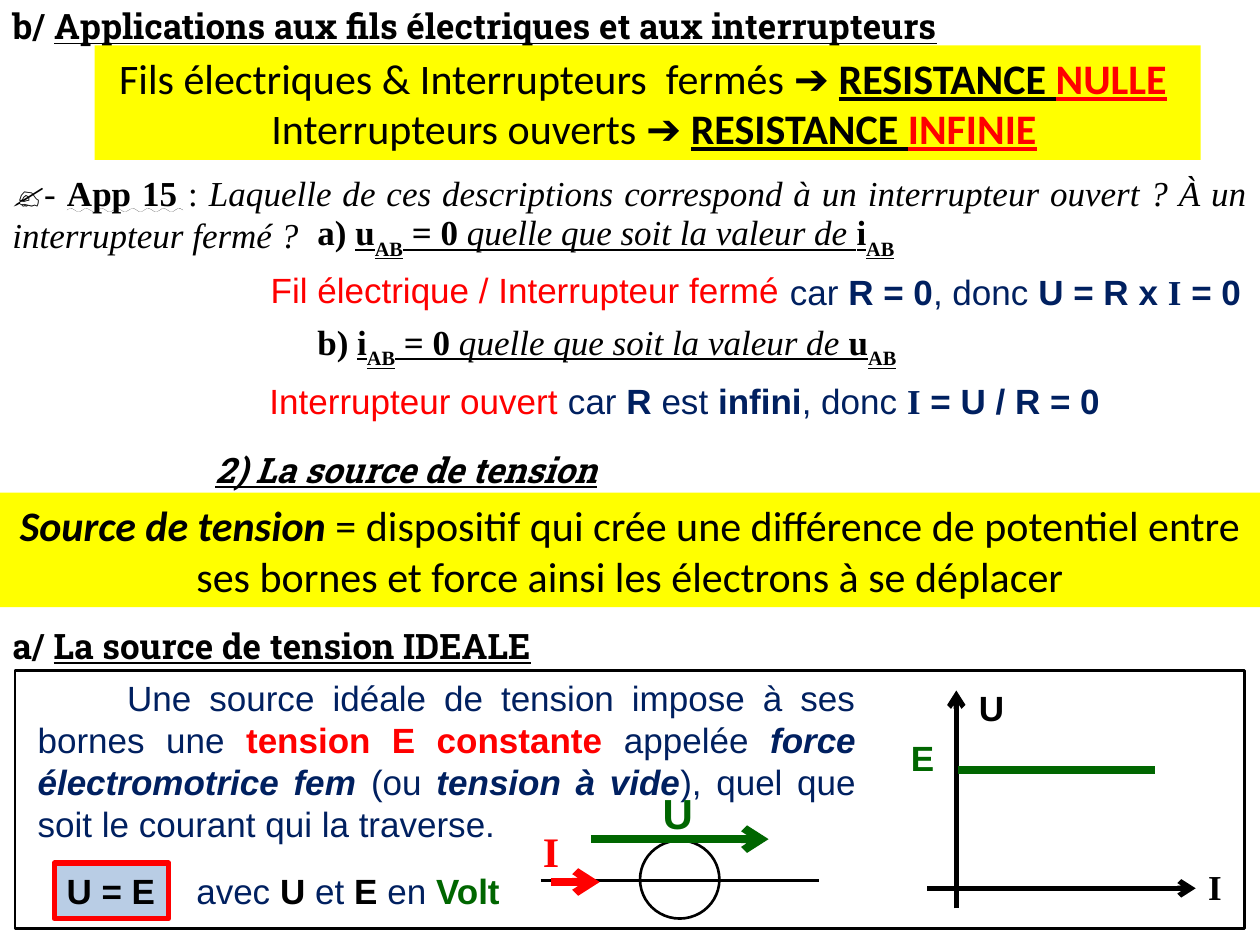
import pptx
import pptx.util
import pptx.dml.color
import pptx.enum.shapes
import pptx.enum.text
import pptx.oxml
import pptx.oxml.ns
from dataclasses import dataclass
from typing import Any, NamedTuple

Kind = pptx.enum.shapes.MSO_SHAPE
Align = pptx.enum.text.PP_ALIGN
Mid = pptx.enum.text.MSO_ANCHOR.MIDDLE
WAVE = pptx.enum.text.MSO_UNDERLINE.WAVY_LINE
COLS, ROWS = 100, 75
INK = {
    "black": "000000", "red": "FF0000", "navy": "002060",
    "green": "006600", "yellow": "FFFF00", "pale": "B9CDE5",
}
SANS, SERIF, SLAB, BODY = "Arial", "Times New Roman", "Roboto Slab", "Calibri"
STYLE = {"b": {"bold": True}, "i": {"italic": True}, "u": {"underline": True},
         "w": {"underline": WAVE}}


class Run(NamedTuple):
    text: str
    flags: str = ""
    ink: str = ""
    face: str = ""


class Para(NamedTuple):
    runs: list[Run]
    align: Any = Align.LEFT
    indent: float = 0
    after: float = 0


@dataclass
class Label:
    box: tuple[float, float, float, float]
    paras: list[Para]
    face: str = SANS
    ink: str = "black"
    size: int = 20
    wrap: bool = True
    anchor: Any = None


@dataclass
class Panel:
    box: tuple[float, float, float, float]
    kind: Any = Kind.RECTANGLE
    fill: str = ""
    edge: str = ""
    width: float = 1.5


@dataclass
class Stroke:
    start: tuple[float, float]
    end: tuple[float, float]
    ink: str = "black"
    width: float = 1.5
    arrow: bool = True


deck = pptx.Presentation()
deck.slide_width = pptx.util.Inches(10)
deck.slide_height = pptx.util.Inches(7.5)
slide = deck.slides.add_slide(deck.slide_layouts[6])


def across(cols: float) -> int:
    return round(deck.slide_width * cols / COLS)


def down(rows: float) -> int:
    return round(deck.slide_height * rows / ROWS)


def place(box: tuple[float, float, float, float]) -> tuple[int, int, int, int]:
    left, top, width, height = box
    return across(left), down(top), across(width), down(height)


def tint(name: str) -> pptx.dml.color.RGBColor:
    return pptx.dml.color.RGBColor.from_string(INK[name])


def write(frame: Any, label: Label) -> None:
    frame.word_wrap = label.wrap
    if label.anchor is not None:
        frame.vertical_anchor = label.anchor
    for spot, para in enumerate(label.paras):
        line = frame.add_paragraph() if spot else frame.paragraphs[0]
        line.alignment = para.align
        line.space_after = pptx.util.Pt(para.after)
        if para.indent:
            props = line._p.get_or_add_pPr()
            props.set("marL", "0")
            props.set("indent", str(across(para.indent)))
        for part in para.runs:
            run = line.add_run()
            run.text = part.text
            form = {"name": part.face or label.face,
                    "size": pptx.util.Pt(label.size),
                    "bold": False, "italic": False}
            for flag in part.flags:
                form |= STYLE.get(flag, {})
            for key, value in form.items():
                setattr(run.font, key, value)
            run.font.color.rgb = tint(part.ink or label.ink)
            if "s" in part.flags:
                run._r.get_or_add_rPr().set("baseline", "-30000")


def draw_text(host: Any, label: Label) -> None:
    write(host.shapes.add_textbox(*place(label.box)).text_frame, label)


def draw_panel(host: Any, panel: Panel) -> Any:
    shape = host.shapes.add_shape(panel.kind, *place(panel.box))
    shape.shadow.inherit = False
    if panel.fill:
        shape.fill.solid()
        shape.fill.fore_color.rgb = tint(panel.fill)
    else:
        shape.fill.background()
    if panel.edge:
        shape.line.color.rgb = tint(panel.edge)
        shape.line.width = pptx.util.Pt(panel.width)
    else:
        shape.line.fill.background()
    return shape


def draw_block(label: Label, fill: str, edge: str = "", width: float = 1.5) -> None:
    shape = draw_panel(slide, Panel(label.box, fill=fill, edge=edge, width=width))
    write(shape.text_frame, label)


def draw_line(host: Any, stroke: Stroke) -> None:
    (left, top), (right, low) = stroke.start, stroke.end
    line = host.shapes.add_connector(
        pptx.enum.shapes.MSO_CONNECTOR.STRAIGHT,
        across(left), down(top), across(right), down(low))
    line.line.color.rgb = tint(stroke.ink)
    line.line.width = pptx.util.Pt(stroke.width)
    if stroke.arrow:
        tail = pptx.oxml.parse_xml(
            f'<a:tailEnd {pptx.oxml.ns.nsdecls("a")} type="arrow"/>')
        line.get_or_add_ln().append(tail)
    line._element.spPr.append(
        pptx.oxml.parse_xml(f'<a:effectLst {pptx.oxml.ns.nsdecls("a")}/>'))


def sign(host: Any, text: str, box: tuple[float, float, float, float],
         ink: str = "black", face: str = SANS, size: int = 20) -> None:
    draw_text(host, Label(box, [Para([Run(text, "b")])], face, ink, size, False))


def choice(mark: str, known: str, free: str) -> list[Para]:
    return [Para([Run(mark, "b"), Run(known, "bu"), Run("AB", "bus"), Run(" = 0", "bu"),
                  Run(" quelle que soit la valeur de ", "iu"),
                  Run(free, "bu"), Run("AB", "bus")], Align.JUSTIFY, 4.9)]


def main() -> None:
    draw_text(slide, Label((2, 53.2, 66.9, 8.4), [Para([
        Run("Une source idéale de tension impose à ses bornes une "),
        Run("tension E constante ", "b", "red"), Run("appelée "),
        Run("force électromotrice fem", "bi"), Run(" (ou "),
        Run("tension à vide", "bi"),
        Run("), quel que soit le courant qui la traverse."),
    ], Align.JUSTIFY, 7.1, 10)], ink="navy"))
    draw_text(slide, Label((14.6, 68.5, 28.3, 3.8), [Para([
        Run("avec "), Run("U", "b", "black"), Run(" et "), Run("E ", "b", "black"),
        Run("en "), Run("Volt", "b", "green")], after=10)], ink="navy"))
    draw_panel(slide, Panel((1.2, 53.2, 97.6, 20.5), edge="black"))
    draw_block(Label((4.3, 68.5, 9.1, 4.4), [Para([Run("U = E", "b")])], wrap=False,
                     anchor=pptx.enum.text.MSO_ANCHOR.TOP), "pale", "red", 3)

    draw_text(slide, Label((16.1, 35.1, 36.2, 4.4), [
        Para([Run("2) La source de tension", "biu")])], SLAB, wrap=False))
    draw_block(Label((0, 39.1, 100, 9.1), [Para([
        Run("Source de tension", "bi"),
        Run(" = dispositif qui crée une différence de potentiel entre "
            "ses bornes et force ainsi les électrons à se déplacer"),
    ], Align.CENTER)], BODY, size=24, anchor=Mid), "yellow")
    draw_text(slide, Label((0, 49, 48.6, 4.4), [Para([
        Run("a/ ", "b"), Run("La source de tension IDEALE", "bu")],
        Align.JUSTIFY)], SLAB, wrap=False, anchor=Mid))

    source = slide.shapes.add_group_shape()
    draw_line(source, Stroke((42.9, 69.9), (65, 69.9), arrow=False))
    draw_panel(source, Panel((50.8, 66.7, 6.3, 6.2), Kind.OVAL, edge="black"))
    draw_line(slide, Stroke((46.9, 66.6), (61, 66.6), "green", 4.5))
    draw_line(slide, Stroke((43.7, 70), (47.6, 70), "red", 4.5))
    sign(slide, "U", (51.6, 62, 4.5, 5), "green", size=24)
    sign(slide, "I", (42.1, 65, 3.3, 5), "red", SERIF, 24)

    graph = slide.shapes.add_group_shape()
    draw_line(graph, Stroke((75.9, 72.1), (75.9, 54.8), width=3))
    draw_line(graph, Stroke((73.6, 70.5), (94.9, 70.5), width=3))
    sign(graph, "U", (76.7, 54, 4.1, 4.4))
    sign(graph, "I", (94.9, 68.2, 3.1, 4.4), face=SERIF)
    draw_line(slide, Stroke((76, 61.1), (91.7, 61.1), "green", 4.5, False))
    sign(slide, "E", (71.3, 58, 3.9, 4.4), "green")

    draw_text(slide, Label((0, -0.1, 83.8, 4.4), [Para([
        Run("b/ ", "b"),
        Run("Applications aux fils électriques et aux interrupteurs", "bu"),
    ])], SLAB, wrap=False))
    draw_block(Label((7.5, 3.6, 87.8, 9.1), [
        Para([Run("Fils électriques & Interrupteurs  fermés ➔ "),
              Run("RESISTANCE ", "bu"), Run("NULLE", "bu", "red"), Run(" ")], Align.CENTER),
        Para([Run("Interrupteurs ouverts ➔ "), Run("RESISTANCE ", "bu"),
              Run("INFINIE", "bu", "red")], Align.CENTER, 1),
    ], BODY, size=24, anchor=Mid), "yellow")
    draw_text(slide, Label((0, 13.1, 100, 7.7), [Para([
        Run("✍- "), Run("App 15", "bw"), Run(" : "),
        Run("Laquelle de ces descriptions correspond à un interrupteur ouvert ? "
            "À un interrupteur fermé ?", "i")], Align.JUSTIFY)], SERIF))

    draw_text(slide, Label((20.5, 20.8, 44.9, 3.7), [
        Para([Run("Fil électrique / Interrupteur fermé")])], ink="red"))
    draw_text(slide, Label((19.3, 16.5, 61.8, 4.4), choice("a) ", "u", "i"),
                           SERIF, anchor=Mid))
    draw_text(slide, Label((19.3, 25.2, 53.7, 4.4), choice("b) ", "i", "u"),
                           SERIF, wrap=False, anchor=Mid))
    draw_text(slide, Label((61.7, 21, 38.3, 4.4), [Para([
        Run("car "), Run("R = 0", "b"), Run(", donc "), Run("U = R x ", "b"),
        Run("I", "b", face=SERIF), Run(" = 0", "b")])], ink="navy", wrap=False))
    draw_text(slide, Label((20.4, 29.6, 26.8, 3.7), [
        Para([Run("Interrupteur ouvert")])], ink="red"))
    draw_text(slide, Label((44.1, 29.6, 44.4, 4.4), [Para([
        Run("car "), Run("R", "b"), Run(" est "), Run("infini", "b"), Run(", donc "),
        Run("I", "b", face=SERIF), Run(" = U / R = 0", "b")])], ink="navy", wrap=False))
    deck.save("out.pptx")


if __name__ == "__main__":
    main()
